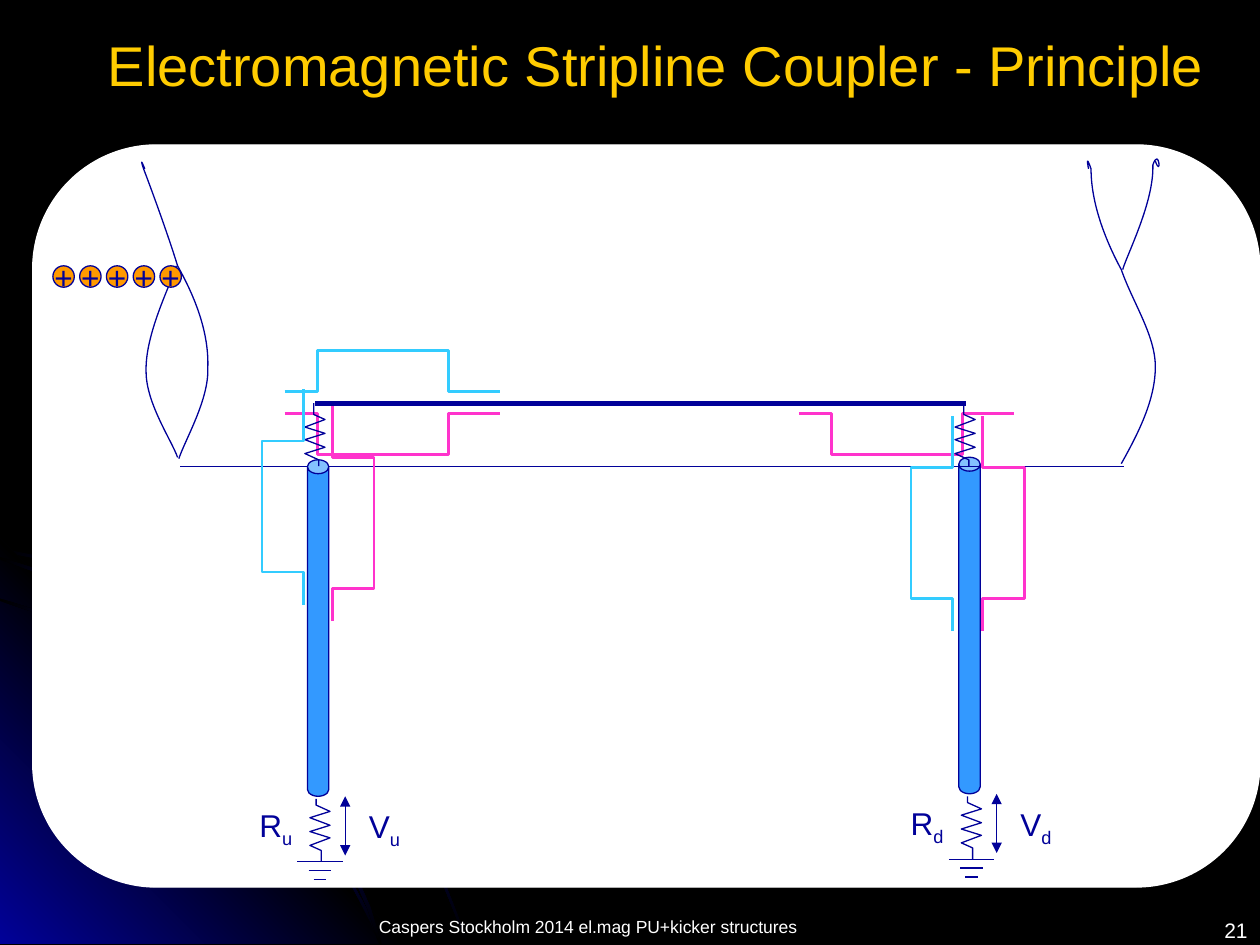
from lxml import etree
from pptx import Presentation
from pptx.dml.color import RGBColor
from pptx.enum.shapes import MSO_CONNECTOR, MSO_SHAPE
from pptx.enum.text import MSO_ANCHOR, PP_ALIGN
from pptx.oxml.ns import qn
from pptx.util import Emu, Pt

CELL = 9144  # the grid has 1000 columns and 750 rows, 0.01 inch each
STRAIGHT = MSO_CONNECTOR.STRAIGHT
CAN, OVAL, ROUNDED = MSO_SHAPE.CAN, MSO_SHAPE.OVAL, MSO_SHAPE.ROUNDED_RECTANGLE
LEFT, CENTER, RIGHT = PP_ALIGN.LEFT, PP_ALIGN.CENTER, PP_ALIGN.RIGHT
TOP, MIDDLE = MSO_ANCHOR.TOP, MSO_ANCHOR.MIDDLE

BLACK, WHITE, GOLD = "000000", "FFFFFF", "FFCC00"
NAVY, BLUE, ORANGE = "010199", "3399FF", "FF9900"
CYAN, PINK = "33CCFF", "FF33CC"

# Outlines of the background swooshes
BANDS = [
    [(57, 447), (28, 441), (0, 435), (0, 438), (28, 443), (56, 449), (97, 461),
     (135, 478), (173, 499), (208, 523), (241, 549), (271, 579), (298, 612),
     (323, 649), (337, 673), (350, 698), (360, 723), (370, 749), (372, 749),
     (362, 723), (352, 698), (339, 673), (325, 648), (300, 611), (272, 578),
     (242, 548), (209, 521), (174, 497), (136, 477), (98, 459)],
    [(322, 749), (0, 749), (0, 427)],
    [(285, 714), (294, 732), (301, 749), (303, 749), (296, 730), (286, 712),
     (266, 676), (242, 640), (215, 606), (184, 576), (152, 549), (117, 526),
     (79, 505), (41, 488), (0, 475), (0, 477), (39, 490), (77, 507),
     (115, 528), (150, 551), (183, 578), (213, 608), (240, 641), (265, 677)],
    [(0, 442), (0, 444), (36, 457), (74, 475), (109, 494), (142, 518),
     (173, 544), (202, 575), (227, 605), (252, 641), (267, 667), (280, 694),
     (292, 722), (301, 749), (303, 749), (294, 720), (282, 693), (269, 665),
     (254, 639), (229, 603), (204, 573), (175, 543), (144, 516), (111, 493),
     (76, 473), (39, 455)],
]
# Beam pipe edges: a start point, then three points for each curve
PIPE_EDGES = [
    [(140, 211), (136, 225), (115, 265), (116, 295), (116, 320), (136, 349), (141, 363)],
    [(891, 214), (895, 201), (916, 160), (915, 131), (920, 116), (922, 142), (917, 128)],
    [(115, 134), (115, 134), (110, 122), (114, 134), (119, 147), (133, 185), (141, 211),
     (155, 236), (166, 264), (165, 292), (166, 317), (147, 349), (142, 364)],
    [(890, 368), (904, 343), (917, 317), (917, 291), (917, 266), (899, 240), (890, 214),
     (877, 190), (866, 161), (866, 134), (861, 120), (864, 134), (864, 134)],
]
ZIGZAG = [(7, 0), (7, 9), (16, 13), (0, 19), (16, 24), (0, 29), (16, 35),
          (0, 40), (11, 45), (11, 50)]
PULSE = [(0, 0), (26, 0), (26, 33), (130, 33), (130, 0), (171, 0)]


def color(hex_text):
    return RGBColor.from_string(hex_text)


class Canvas:
    """The current slide, its grid and its style."""

    font_name = "Arial"

    def __init__(self, slide):
        self.slide = slide
        self.shapes = slide.shapes

    def cells(self, *lengths):
        return [Emu(round(length * CELL)) for length in lengths]

    def outline(self, shape, line_color, width):
        shape.line.color.rgb = color(line_color)
        shape.line.width = Pt(width)

    def fill_text(self, frame, text, size, text_color, align=LEFT, anchor=TOP, wrap=True,
                  subscript=""):
        frame.word_wrap = wrap
        frame.vertical_anchor = anchor
        paragraph = frame.paragraphs[0]
        paragraph.alignment = align
        for part, offset in ((text, 0), (subscript, -25000)):
            if not part:
                continue
            run = paragraph.add_run()
            run.text = part
            run.font.name = self.font_name
            run.font.size = Pt(size)
            run.font.color.rgb = color(text_color)
            if offset:
                run._r.get_or_add_rPr().set("baseline", str(offset))

    def title(self, box, text):
        title = self.shapes.title
        title.left, title.top, title.width, title.height = self.cells(*box)
        self.fill_text(title.text_frame, text, 32, GOLD, CENTER, MIDDLE)

    def text(self, box, text, size, text_color, **layout):
        frame = self.shapes.add_textbox(*self.cells(*box)).text_frame
        self.fill_text(frame, text, size, text_color, **layout)

    def shape(self, kind, box, fill, line_color=NAVY, adjustment=None):
        shape = self.shapes.add_shape(kind, *self.cells(*box))
        shape.shadow.inherit = False
        shape.fill.solid()
        shape.fill.fore_color.rgb = color(fill)
        self.outline(shape, line_color, 0.75)
        if adjustment is not None:
            shape.adjustments[0] = adjustment
        return shape

    def line(self, start, end, width=0.75, arrows=False):
        connector = self.shapes.add_connector(STRAIGHT, *self.cells(*start, *end))
        self.outline(connector, NAVY, width)
        if arrows:
            outline = connector.line._get_or_add_ln()
            for tag in ("a:headEnd", "a:tailEnd"):
                etree.SubElement(outline, qn(tag)).set("type", "triangle")
        etree.SubElement(connector._element.spPr, qn("a:effectLst"))

    def freeform(self, points, close=False):
        builder = self.shapes.build_freeform(*points[0], scale=CELL)
        builder.add_line_segments(points[1:], close=close)
        shape = builder.convert_to_shape()
        shape.shadow.inherit = False
        return shape

    def polyline(self, points, line_color=NAVY, width=0.75):
        shape = self.freeform(points)
        shape.fill.background()
        self.outline(shape, line_color, width)
        return shape

    def curve(self, points):
        """Turn each three points after the first into one Bezier segment."""
        outline = next(self.polyline(points)._element.iter(qn("a:path")))
        segments = outline.findall(qn("a:lnTo"))
        for index in range(0, len(segments), 3):
            bezier = etree.SubElement(outline, qn("a:cubicBezTo"))
            for segment in segments[index:index + 3]:
                bezier.append(segment[0])
                outline.remove(segment)

    def gradient(self, points, outer, inner, angle):
        shape = self.freeform(points, close=True)
        shape.line.fill.background()
        shape.fill.gradient()
        shape.fill.gradient_angle = angle
        stops = next(shape._element.spPr.iter(qn("a:gsLst")))
        for stop in list(stops):
            stops.remove(stop)
        for position, stop_color in ((0, outer), (50000, inner), (100000, outer)):
            stop = etree.SubElement(stops, qn("a:gs"), pos=str(position))
            etree.SubElement(stop, qn("a:srgbClr"), val=stop_color)

    def resistor(self, x, y, turned=False):
        points = [(17 - dx, 51 - dy) if turned else (dx, dy) for dx, dy in ZIGZAG]
        self.polyline([(x + dx, y + dy) for dx, dy in points])

    def pulse(self, x, y, side, line_color, upward=False):
        """Draw a pulse to the right, or upward, bulging towards side."""
        points = [(x + side * bulge, y - along) if upward else (x + along, y + side * bulge)
                  for along, bulge in PULSE]
        self.polyline(points, line_color, 1.5)

    def coupler(self, x, y, subscript):
        """Draw a port with its load resistor, ground and labels."""
        self.shape(CAN, (x, y, 17, 267), BLUE, adjustment=0.648)
        self.resistor(x + 1, y + 268, turned=True)
        for row, half_width in enumerate((18, 9, 5)):
            level = y + 319 + 7 * row
            self.line((x + 10 - half_width, level), (x + 10 + half_width, level))
        self.line((x + 30, y + 267), (x + 30, y + 314), arrows=True)
        for letter, left, top in (("R", -48, 270), ("V", 39, 271)):
            self.text((x + left, y + top, 47, 40), letter, 18, NAVY, wrap=False, subscript=subscript)

    def ion(self, x, y):
        frame = self.shape(OVAL, (x, y, 17, 17), ORANGE).text_frame
        frame.margin_left = frame.margin_right = frame.margin_top = frame.margin_bottom = 0
        self.fill_text(frame, "+", 18, NAVY, CENTER, MIDDLE, wrap=False)


def main():
    presentation = Presentation()
    presentation.slide_width, presentation.slide_height = Emu(1000 * CELL), Emu(750 * CELL)
    slide = presentation.slides.add_slide(presentation.slide_layouts[5])
    slide.background.fill.solid()
    slide.background.fill.fore_color.rgb = color(BLACK)
    canvas = Canvas(slide)

    for index, band in enumerate(BANDS):
        if index == 1:
            canvas.gradient(band, NAVY, BLACK, 45)
        else:
            canvas.gradient(band, BLACK, NAVY, 315)
    canvas.text((212, 722, 509, 28), "Caspers Stockholm 2014 el.mag PU+kicker structures",
                10, WHITE, align=CENTER)
    canvas.shape(ROUNDED, (26, 115, 974, 589), WHITE, WHITE, adjustment=0.167)
    canvas.title((71, 17, 900, 68), "Electromagnetic Stripline Coupler - Principle")

    canvas.coupler(761, 363, "d")
    for edge in PIPE_EDGES:
        canvas.curve(edge)
    canvas.line((143, 370), (892, 370))
    for index in range(5):
        canvas.ion(42 + 21.25 * index, 211)

    canvas.pulse(226, 311, -1, CYAN)
    canvas.pulse(226, 328, 1, PINK)
    canvas.pulse(634, 328, 1, PINK)
    canvas.coupler(244, 365, "u")
    canvas.line((250, 320), (767, 320), width=3)
    for x in (242, 758):
        canvas.resistor(x, 320)
    for x, y, side, line_color in ((241, 480, -1, CYAN), (264, 493, 1, PINK),
                                   (756, 501, -1, CYAN), (780, 501, 1, PINK)):
        canvas.pulse(x, y, side, line_color, upward=True)
    canvas.text((918, 726, 82, 24), "21", 12, WHITE, align=RIGHT, anchor=MIDDLE)
    presentation.save("out.pptx")


if __name__ == "__main__":
    main()
